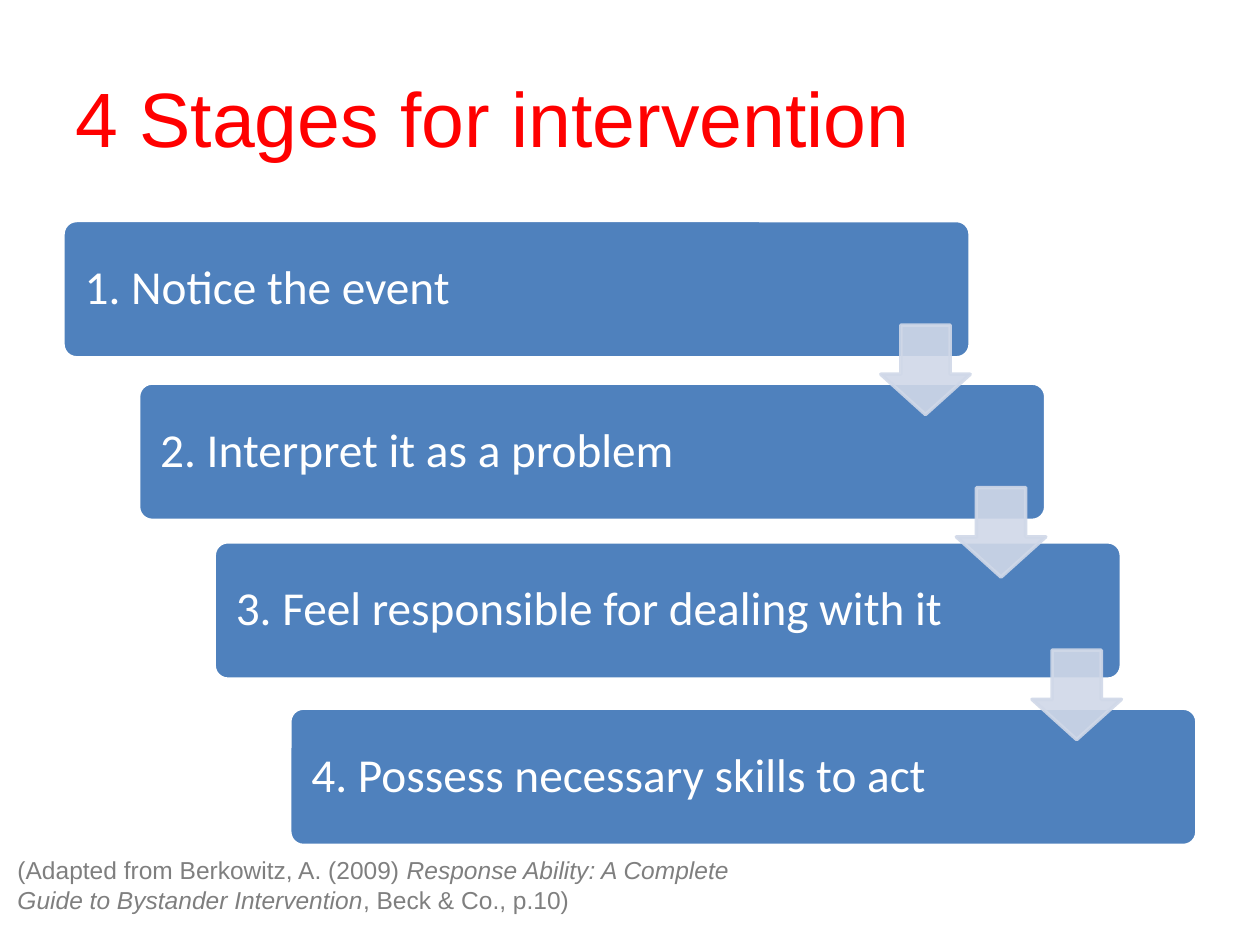
from dataclasses import dataclass
from lxml import etree
from pptx import Presentation
from pptx.dml.color import RGBColor
from pptx.enum.shapes import MSO_SHAPE
from pptx.enum.text import MSO_ANCHOR, PP_ALIGN
from pptx.oxml.ns import qn
from pptx.util import Inches, Pt

BAR, ARROW = MSO_SHAPE.ROUNDED_RECTANGLE, MSO_SHAPE.DOWN_ARROW
MIDDLE, TOP, LEFT = MSO_ANCHOR.MIDDLE, MSO_ANCHOR.TOP, PP_ALIGN.LEFT
WHITE, BLUE, PALE, RED, GREY = "FFFFFF", "4F81BD", "D0D8E8", "FF0000", "7F7F7F"

COL, ROW = 0.6, 1.29  # shift from one stage to the next
BAR_X, BAR_Y, BAR_W, BAR_H = 0.5, 1.75, 7.2, 1.09
ARROW_X, ARROW_Y, ARROW_SIZE = 6.99, 2.58, 0.71


@dataclass
class Stage:
    text: str
    lift: float = 0


@dataclass
class Run:
    text: str
    italic: bool = False


STAGES = [
    Stage("1. Notice the event"),
    Stage("2. Interpret it as a problem"),
    Stage("3. Feel responsible for dealing with it", 0.03),
    Stage("4. Possess necessary skills to act"),
]
SOURCE = [
    Run("(Adapted from Berkowitz, A. (2009) "),
    Run("Response Ability: A Complete Guide to Bystander Intervention", True),
    Run(", Beck & Co., p.10)"),
]


def color(code: str) -> RGBColor:
    return RGBColor.from_string(code)


def write(shape, runs: list[Run], name: str, size: float, code: str,
          anchor=MIDDLE, inset: float = 0.1, space: float = 1) -> None:
    frame = shape.text_frame
    form = {"word_wrap": True, "vertical_anchor": anchor,
            "margin_left": Inches(inset), "margin_right": Inches(inset)}
    for key, value in form.items():
        setattr(frame, key, value)
    para = frame.paragraphs[0]
    para.alignment, para.line_spacing = LEFT, space
    for item in runs:
        run = para.add_run()
        run.text = item.text
        look = {"name": name, "size": Pt(size), "italic": item.italic}
        for key, value in look.items():
            setattr(run.font, key, value)
        run.font.color.rgb = color(code)


def draw(slide, kind, box: tuple, adjust: list[float], fill: str, line: str):
    shape = slide.shapes.add_shape(kind, *map(Inches, box))
    shape.shadow.inherit = False
    shape.fill.solid()
    shape.fill.fore_color.rgb = color(fill)
    shape.line.color.rgb = color(line)
    shape.line.width = Pt(2)
    for index, value in enumerate(adjust):
        shape.adjustments[index] = value
    return shape


def fade(shape, share: int) -> None:
    """Set the opacity of fill and line in percent."""
    for node in shape.element.spPr.iter(qn("a:srgbClr")):
        etree.SubElement(node, qn("a:alpha")).set("val", str(share * 1000))


def label(slide, box: tuple, *args) -> None:
    write(slide.shapes.add_textbox(*map(Inches, box)), *args)


def main() -> None:
    deck = Presentation()
    deck.slide_width, deck.slide_height = Inches(10), Inches(7.5)
    slide = deck.slides.add_slide(deck.slide_layouts[6])

    label(slide, (0.5, 0.3, 9, 1.25),
          [Run("4 Stages for intervention")], "Arial", 44, RED)
    for step, stage in enumerate(STAGES):
        box = (BAR_X + step * COL, BAR_Y + step * ROW - stage.lift, BAR_W, BAR_H)
        bar = draw(slide, BAR, box, [0.1], BLUE, WHITE)
        write(bar, [Run(stage.text)], "Calibri", 27, WHITE, MIDDLE, 0.14, 0.9)
    for step in range(len(STAGES) - 1):
        box = (ARROW_X + step * COL, ARROW_Y + step * ROW, ARROW_SIZE, ARROW_SIZE)
        fade(draw(slide, ARROW, box, [0.55, 0.45], PALE, PALE), 90)
    label(slide, (0.04, 6.74, 6.38, 0.57), SOURCE, "Arial", 14, GREY, TOP)

    deck.save("out.pptx")


if __name__ == "__main__":
    main()
